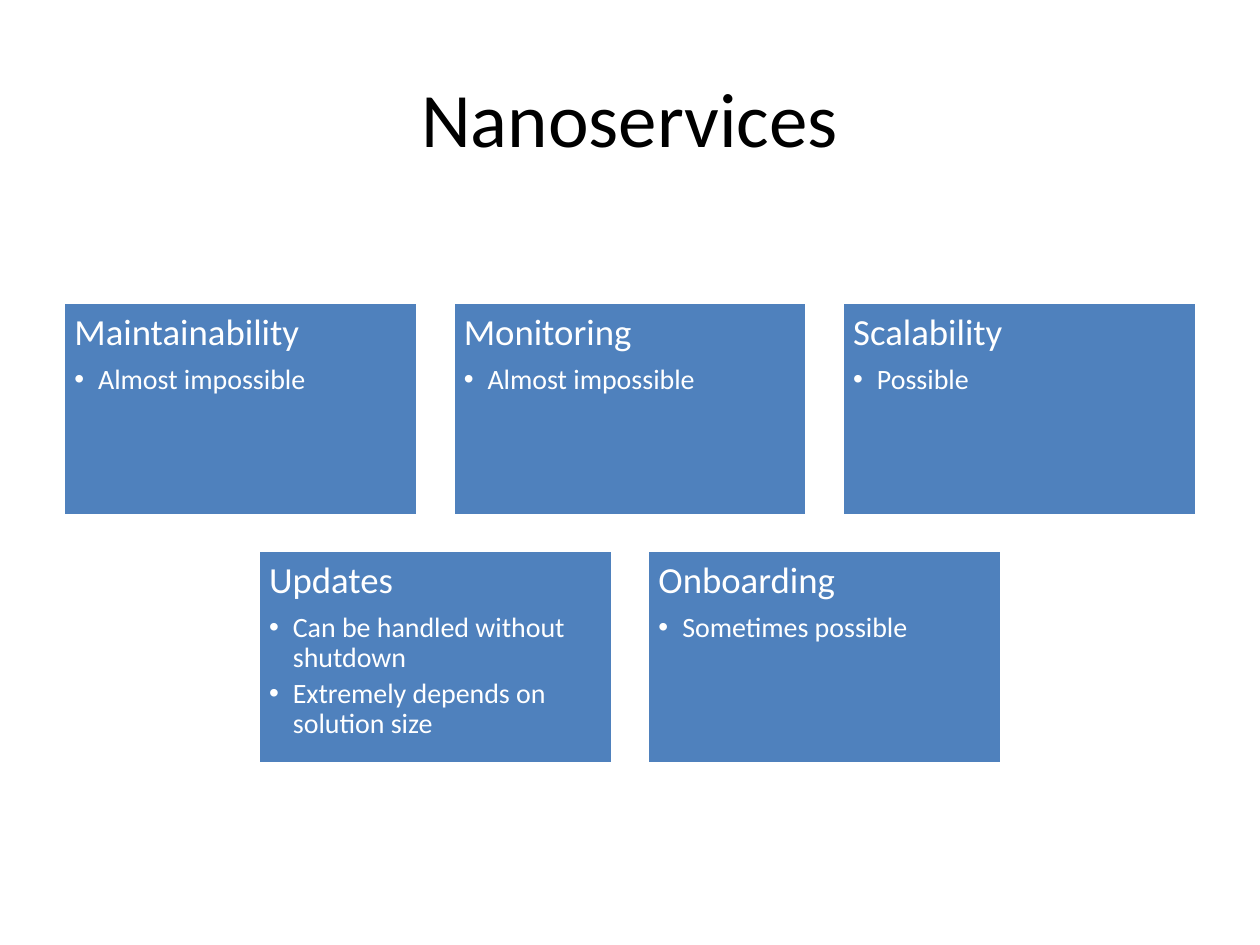
from lxml import etree
from pptx import Presentation
from pptx.dml.color import RGBColor
from pptx.enum import shapes, text
from pptx.oxml import ns
from pptx.util import Cm, Pt

COLORS = {"title": "000000", "card": "4F81BD", "white": "FFFFFF"}
FONT = "Calibri"
SLIDE_WIDTH, SLIDE_HEIGHT = 25.4, 19.05
CARD_WIDTH, CARD_HEIGHT, GAP = 7.14, 4.29, 0.71
CARDS_TOP = 6.1
INDENT = 0.48
ROWS = [
    [
        ("Maintainability", ["Almost impossible"]),
        ("Monitoring", ["Almost impossible"]),
        ("Scalability", ["Possible"]),
    ],
    [
        ("Updates", ["Can be handled without shutdown", "Extremely depends on solution size"]),
        ("Onboarding", ["Sometimes possible"]),
    ],
]


def color(name):
    return RGBColor.from_string(COLORS[name])


def add_bullet(paragraph):
    properties = paragraph._p.get_or_add_pPr()
    properties.set("marL", str(Cm(INDENT)))
    properties.set("indent", str(-Cm(INDENT)))
    bullet_font = etree.SubElement(properties, ns.qn("a:buFont"))
    bullet_font.set("typeface", "Arial")
    bullet = etree.SubElement(properties, ns.qn("a:buChar"))
    bullet.set("char", "•")


def write(paragraph, content, size, fill="white", align=text.PP_ALIGN.LEFT,
          bullet=False, line_spacing=None, space_after=0):
    if bullet:
        paragraph.level = 1
        add_bullet(paragraph)
    paragraph.alignment = align
    paragraph.line_spacing = line_spacing
    paragraph.space_before = Pt(0)
    paragraph.space_after = Pt(space_after)
    run = paragraph.add_run()
    run.text = content
    run.font.name = FONT
    run.font.size = Pt(size)
    run.font.color.rgb = color(fill)


def add_title(slide, content):
    title = slide.shapes.title
    title.left, title.top = Cm(1.27), Cm(0.76)
    title.width, title.height = Cm(22.86), Cm(3.18)
    title.text_frame.vertical_anchor = text.MSO_ANCHOR.MIDDLE
    write(title.text_frame.paragraphs[0], content, 44, fill="title",
          align=text.PP_ALIGN.CENTER)


def add_card(slide, left, top, heading, points):
    card = slide.shapes.add_shape(shapes.MSO_SHAPE.RECTANGLE, Cm(left), Cm(top),
                                  Cm(CARD_WIDTH), Cm(CARD_HEIGHT))
    card.shadow.inherit = False
    card.fill.solid()
    card.fill.fore_color.rgb = color("card")
    card.line.color.rgb = color("white")
    card.line.width = Pt(2)
    frame = card.text_frame
    frame.word_wrap = True
    frame.vertical_anchor = text.MSO_ANCHOR.TOP
    frame.margin_left = frame.margin_right = Cm(0.22)
    frame.margin_top = frame.margin_bottom = Cm(0.22)
    write(frame.paragraphs[0], heading, 21, line_spacing=0.9, space_after=7)
    for point in points:
        write(frame.add_paragraph(), point, 16, bullet=True,
              line_spacing=0.9, space_after=3)


def add_card_row(slide, top, cards):
    row_width = len(cards) * (CARD_WIDTH + GAP) - GAP
    first_left = (SLIDE_WIDTH - row_width) / 2
    for column, (heading, points) in enumerate(cards):
        add_card(slide, first_left + column * (CARD_WIDTH + GAP), top, heading, points)


def main():
    presentation = Presentation()
    presentation.slide_width = Cm(SLIDE_WIDTH)
    presentation.slide_height = Cm(SLIDE_HEIGHT)
    slide = presentation.slides.add_slide(presentation.slide_layouts[5])
    add_title(slide, "Nanoservices")
    for row, cards in enumerate(ROWS):
        add_card_row(slide, CARDS_TOP + row * (CARD_HEIGHT + GAP), cards)
    presentation.save("out.pptx")


if __name__ == "__main__":
    main()
